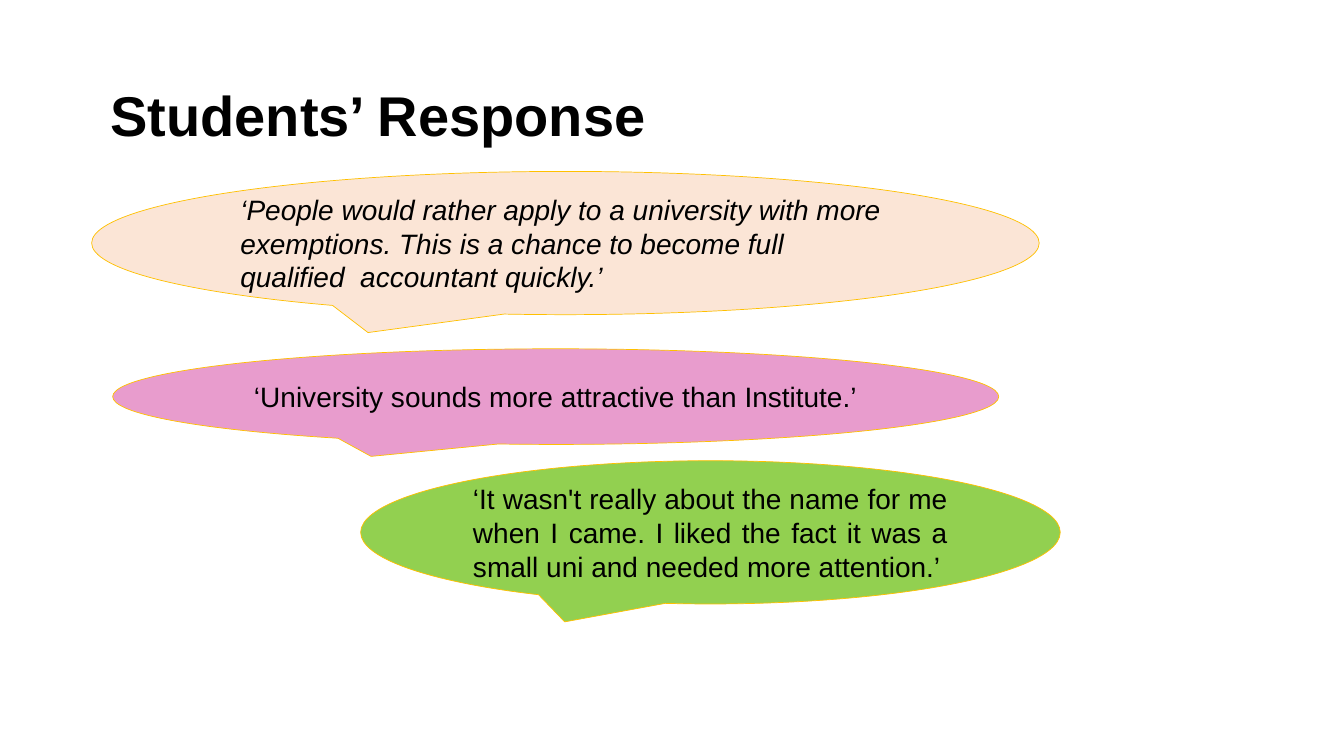
from dataclasses import dataclass

from pptx import Presentation
from pptx import util as u
from pptx.dml.color import RGBColor
from pptx.enum import shapes, text


@dataclass(frozen=True)
class Theme:
    font: str = "Arial"
    ink: str = "000000"
    outline: str = "FFC000"
    peach: str = "FBE5D6"
    pink: str = "E89CCD"
    green: str = "92D050"
    title_size: int = 40
    quote_size: int = 20
    outline_width: float = 0.5


class SlideBuilder:
    def __init__(self, slide, theme):
        self.slide = slide
        self.theme = theme

    def set_wording(self, frame, wording, size, align, anchor, bold=False, italic=False):
        frame.word_wrap = True
        frame.vertical_anchor = anchor
        paragraph = frame.paragraphs[0]
        paragraph.text = wording
        paragraph.alignment = align
        font = paragraph.font
        font.name, font.size = self.theme.font, u.Pt(size)
        font.bold, font.italic = bold, italic
        font.color.rgb = RGBColor.from_string(self.theme.ink)
        return paragraph

    def title(self, wording, left, top, width, height):
        heading = self.slide.shapes.add_textbox(*map(u.Cm, (left, top, width, height)))
        line = self.set_wording(heading.text_frame, wording, self.theme.title_size,
                                text.PP_ALIGN.LEFT, text.MSO_ANCHOR.BOTTOM, bold=True)
        line.line_spacing = 0.9

    def quote(self, wording, bounds, fill, align, italic=False):
        """Add a speech bubble; bounds are left, top, width and height in cm."""
        bubble = self.slide.shapes.add_shape(
            shapes.MSO_SHAPE.OVAL_CALLOUT, *map(u.Cm, bounds))
        bubble.shadow.inherit = False
        bubble.fill.solid()
        bubble.fill.fore_color.rgb = RGBColor.from_string(fill)
        bubble.line.color.rgb = RGBColor.from_string(self.theme.outline)
        bubble.line.width = u.Pt(self.theme.outline_width)
        self.set_wording(bubble.text_frame, wording, self.theme.quote_size,
                         align, text.MSO_ANCHOR.MIDDLE, italic=italic)


def main():
    deck = Presentation()
    deck.slide_width, deck.slide_height = u.Cm(33.87), u.Cm(19.05)
    theme = Theme()
    builder = SlideBuilder(deck.slides.add_slide(deck.slide_layouts[6]), theme)

    builder.title("Students’ Response", 2.54, 2.03, 28.78, 1.83)
    builder.quote(
        "‘People would rather apply to a university with more exemptions. "
        "This is a chance to become full qualified  accountant quickly.’",
        (2.31, 4.32, 23.88, 3.61), theme.peach, text.PP_ALIGN.LEFT, italic=True)
    builder.quote(
        "‘University sounds more attractive than Institute.’",
        (2.84, 8.79, 22.33, 2.41), theme.pink, text.PP_ALIGN.CENTER)
    builder.quote(
        "‘It wasn't really about the name for me when I came. "
        "I liked the fact it was a small uni and needed more attention.’",
        (9.09, 11.61, 17.63, 3.61), theme.green, text.PP_ALIGN.JUSTIFY)

    deck.save("out.pptx")


if __name__ == "__main__":
    main()
